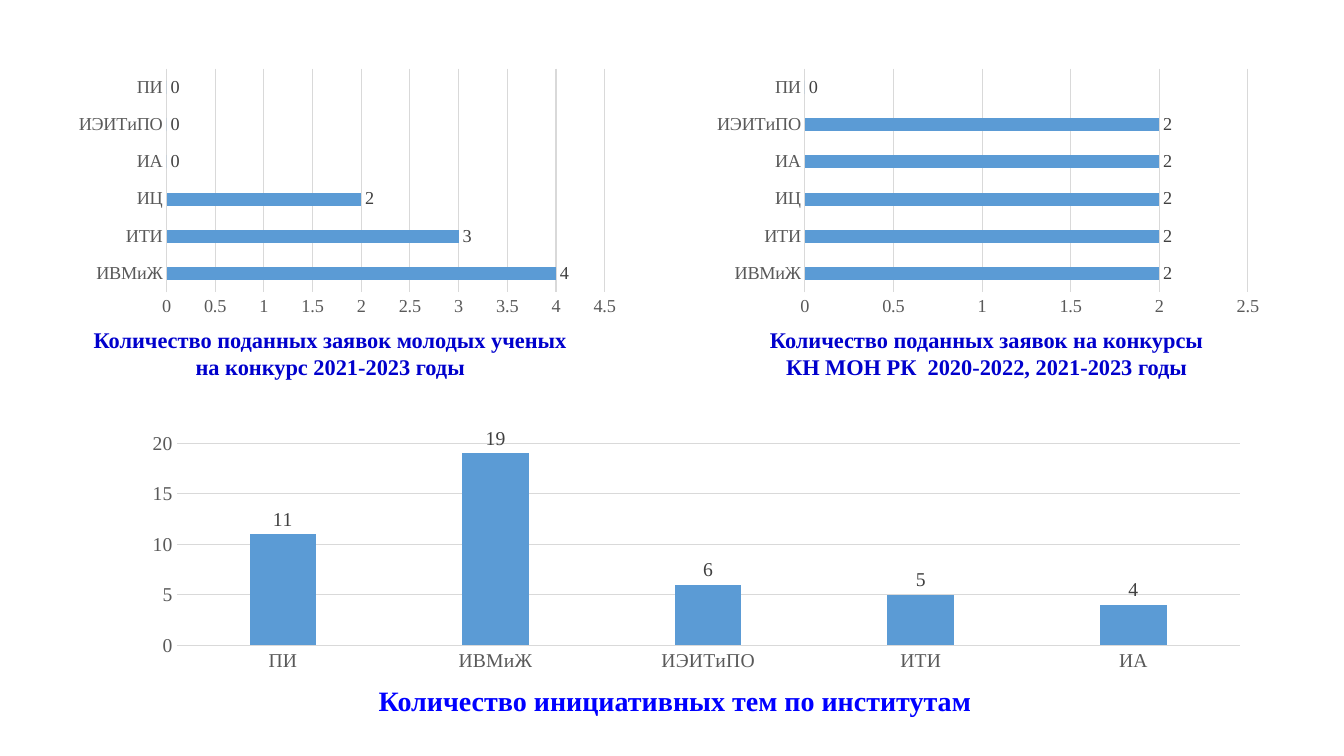
from pptx import Presentation
from pptx.chart.data import CategoryChartData
from pptx.dml.color import RGBColor
from pptx.enum import chart as ch, text
from pptx.util import Inches, Pt

FONT = "Times New Roman"
BAR_BLUE = RGBColor(0x5B, 0x9B, 0xD5)
GRID_GREY = RGBColor(0xD9, 0xD9, 0xD9)
AXIS_GREY = RGBColor(0x59, 0x59, 0x59)
LABEL_GREY = RGBColor(0x40, 0x40, 0x40)
CAPTION_BLUE = RGBColor(0x00, 0x00, 0xCC)
TOPICS_BLUE = RGBColor(0x00, 0x00, 0xFF)

INSTITUTES = ["ИВМиЖ", "ИТИ", "ИЦ", "ИА", "ИЭИТиПО", "ПИ"]


def style_font(font, size, color, bold=False):
    font.name = FONT
    font.size = Pt(size)
    font.color.rgb = color
    font.bold = bold


def style_line(line):
    line.color.rgb = GRID_GREY
    line.width = Pt(0.75)


def add_bars(slide, box, kind, names, counts, size, gap, top, step, overlap=0):
    """Single-series bar chart filling box, with values at the bar ends."""
    data = CategoryChartData()
    data.categories = names
    data.add_series("Количество", counts)
    chart = slide.shapes.add_chart(kind, *map(Inches, box), data).chart
    chart.has_legend = False
    chart.has_title = False
    style_font(chart.font, size, AXIS_GREY)

    # Axes
    for axis in (chart.category_axis, chart.value_axis):
        axis.major_tick_mark = axis.minor_tick_mark = ch.XL_TICK_MARK.NONE
        style_font(axis.tick_labels.font, size, AXIS_GREY)
    style_line(chart.category_axis.format.line)
    counts_axis = chart.value_axis
    counts_axis.format.line.fill.background()
    counts_axis.has_major_gridlines = True
    style_line(counts_axis.major_gridlines.format.line)
    counts_axis.minimum_scale = 0
    counts_axis.maximum_scale = top
    counts_axis.major_unit = step

    # Bars and their values
    plot = chart.plots[0]
    plot.vary_by_categories = False
    plot.gap_width = gap
    plot.overlap = overlap
    bars = plot.series[0]
    bars.format.fill.solid()
    bars.format.fill.fore_color.rgb = BAR_BLUE
    bars.invert_if_negative = False
    values = bars.data_labels
    values.show_value = True
    values.position = ch.XL_LABEL_POSITION.OUTSIDE_END
    style_font(values.font, size, LABEL_GREY)


def add_caption(slide, box, lines, size, color, wrap=True, first_indent=0):
    """Bold centred caption; first_indent is the right indent of line one."""
    frame = slide.shapes.add_textbox(*map(Inches, box)).text_frame
    frame.word_wrap = wrap
    frame.auto_size = text.MSO_AUTO_SIZE.SHAPE_TO_FIT_TEXT
    frame.text = "\n".join(lines)
    for paragraph in frame.paragraphs:
        paragraph.alignment = text.PP_ALIGN.CENTER
        style_font(paragraph.font, size, color, bold=True)
    if first_indent:
        properties = frame.paragraphs[0]._p.get_or_add_pPr()
        properties.set("marR", str(Inches(first_indent)))


def add_applications(slide, chart_box, caption_box, counts, top, lines, indent):
    """Horizontal bars by institute with a two-line caption underneath."""
    add_bars(slide, chart_box, ch.XL_CHART_TYPE.BAR_CLUSTERED, INSTITUTES,
             counts, size=13, gap=182, top=top, step=0.5)
    add_caption(slide, caption_box, lines, 16, CAPTION_BLUE, first_indent=indent)


def add_topics(slide, chart_box, caption_box):
    """Columns of initiative topics by institute."""
    add_bars(slide, chart_box, ch.XL_CHART_TYPE.COLUMN_CLUSTERED,
             ["ПИ", "ИВМиЖ", "ИЭИТиПО", "ИТИ", "ИА"], [11, 19, 6, 5, 4],
             size=14, gap=219, top=20, step=5, overlap=-27)
    add_caption(slide, caption_box, ["Количество инициативных тем по институтам"],
                20, TOPICS_BLUE, wrap=False)


def main():
    deck = Presentation()
    deck.slide_width, deck.slide_height = Inches(13.33), Inches(7.5)
    slide = deck.slides.add_slide(deck.slide_layouts[6])

    # Young scientists' applications
    add_applications(slide, (0.67, 0.63, 5.55, 2.56), (0.39, 3.19, 5.83, 0.64),
                     [4, 3, 2, 0, 0, 0], 4.5,
                     ["Количество поданных заявок молодых ученых",
                      "на конкурс 2021-2023 годы"], 0.06)
    # Ministry competition applications
    add_applications(slide, (7, 0.63, 5.6, 2.56), (7.38, 3.19, 5.31, 0.64),
                     [2, 2, 2, 2, 2, 0], 2.5,
                     ["Количество поданных заявок на конкурсы",
                      "КН МОН РК  2020-2022, 2021-2023 годы"], 0.5)
    # Initiative topics
    add_topics(slide, (1.29, 4.24, 11.23, 2.47), (3.63, 6.73, 6.13, 0.44))

    deck.save("out.pptx")


if __name__ == "__main__":
    main()
